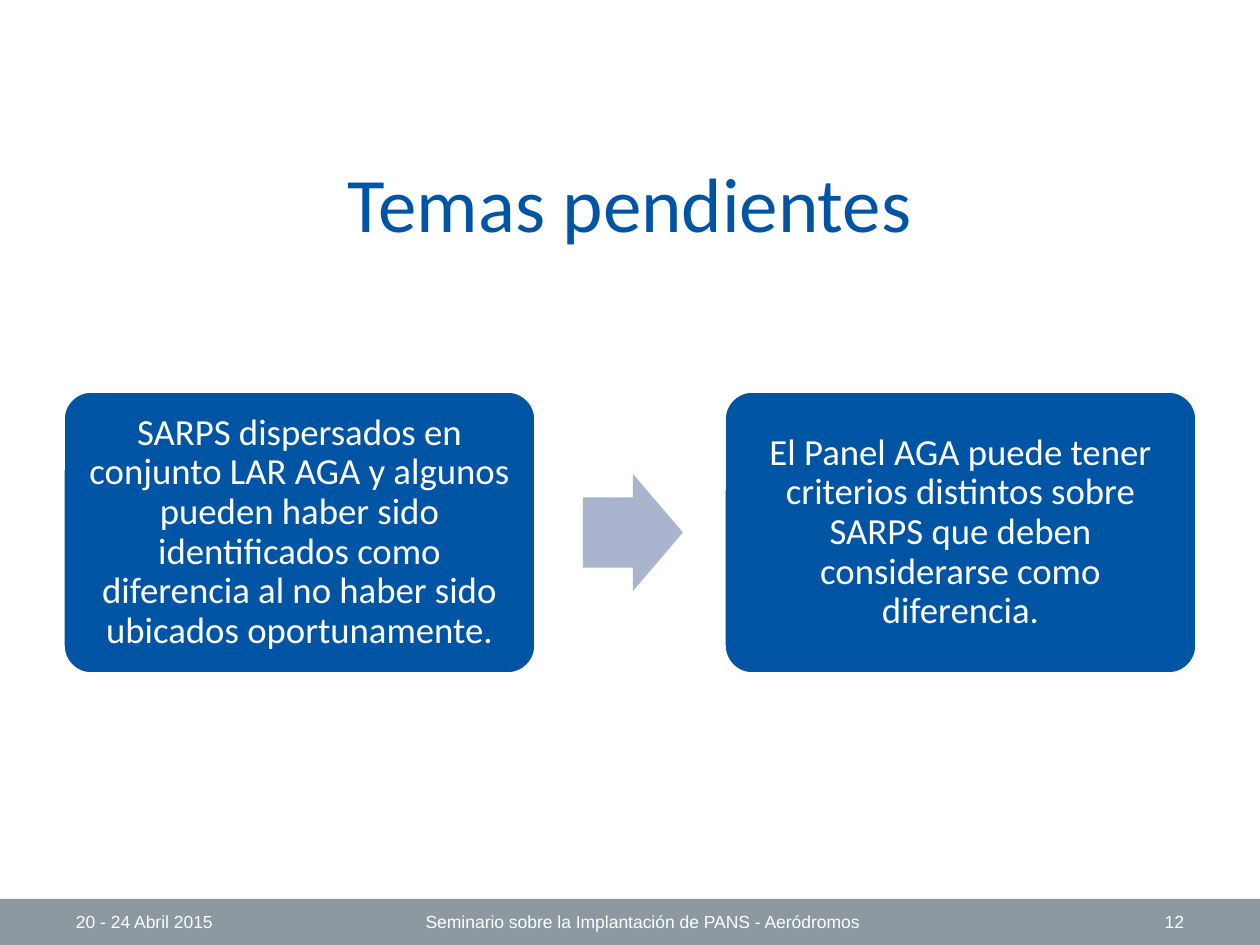
from dataclasses import dataclass

from pptx import Presentation
from pptx.dml.color import RGBColor
from pptx.enum.shapes import MSO_SHAPE
from pptx.enum.text import MSO_ANCHOR, PP_ALIGN
from pptx.shapes.autoshape import Shape
from pptx.slide import Slide
from pptx.util import Emu, Pt

PX = 914400 // 126
COLORS = {"blue": "0054A4", "arrow": "ABB4CF", "bar": "8C99A1", "white": "FFFFFF"}


@dataclass
class Area:
    left: int
    top: int
    width: int
    height: int

    def emu(self) -> list[Emu]:
        return [Emu(n * PX) for n in (self.left, self.top, self.width, self.height)]


@dataclass
class Style:
    font: str
    size: int
    color: str
    align: PP_ALIGN = PP_ALIGN.CENTER
    anchor: MSO_ANCHOR = MSO_ANCHOR.MIDDLE
    pad_x: int = 13
    pad_y: int = 6
    spacing: float = 1.0


@dataclass
class Label:
    text: str
    left: int
    width: int
    align: PP_ALIGN


def rgb(name: str) -> RGBColor:
    return RGBColor.from_string(COLORS[name])


def write(shape: Shape, text: str, style: Style) -> None:
    frame = shape.text_frame
    frame.word_wrap = True
    frame.vertical_anchor = style.anchor
    frame.margin_left = frame.margin_right = Emu(style.pad_x * PX)
    frame.margin_top = frame.margin_bottom = Emu(style.pad_y * PX)
    para = frame.paragraphs[0]
    para.text = text
    para.alignment = style.align
    para.line_spacing = style.spacing
    para.font.name = style.font
    para.font.size = Pt(style.size)
    para.font.color.rgb = rgb(style.color)


def add_text(slide: Slide, area: Area, text: str, style: Style) -> None:
    write(slide.shapes.add_textbox(*area.emu()), text, style)


def add_block(slide: Slide, kind: MSO_SHAPE, area: Area, fill: str,
              adjust: tuple[float, ...] = (), line: str = "") -> Shape:
    shape = slide.shapes.add_shape(kind, *area.emu())
    shape.shadow.inherit = False
    for index, value in enumerate(adjust):
        shape.adjustments[index] = value
    shape.fill.solid()
    shape.fill.fore_color.rgb = rgb(fill)
    if line:
        shape.line.color.rgb = rgb(line)
        shape.line.width = Pt(2)
    else:
        shape.line.fill.background()
    return shape


TITLE = Style("Calibri", 44, "blue", anchor=MSO_ANCHOR.TOP, pad_y=10)
BODY = Style("Calibri", 21, "white", pad_x=11, pad_y=11, spacing=0.9)
STEPS = [
    "SARPS dispersados en conjunto LAR AGA y algunos pueden haber sido "
    "identificados como diferencia al no haber sido ubicados oportunamente.",
    "El Panel AGA puede tener criterios distintos sobre SARPS que deben "
    "considerarse como diferencia.",
]
FOOTER = [
    Label("20 - 24 Abril 2015", 63, 294, PP_ALIGN.LEFT),
    Label("Seminario sobre la Implantación de PANS - Aeródromos", 409, 467, PP_ALIGN.CENTER),
    Label("12", 903, 294, PP_ALIGN.RIGHT),
]
BAR_TOP, BAR_HIGH = 899, 46
STEP_LEFT, STEP_PITCH = 63, 661


def main() -> None:
    deck = Presentation()
    deck.slide_width, deck.slide_height = Emu(1260 * PX), Emu(945 * PX)
    slide = deck.slides.add_slide(deck.slide_layouts[6])

    add_block(slide, MSO_SHAPE.RECTANGLE, Area(0, BAR_TOP, 1260, BAR_HIGH), "bar")
    add_text(slide, Area(63, 145, 1134, 158), "Temas pendientes", TITLE)

    for index, text in enumerate(STEPS):
        area = Area(STEP_LEFT + index * STEP_PITCH, 391, 473, 283)
        step = add_block(slide, MSO_SHAPE.ROUNDED_RECTANGLE, area, "blue", (0.1,), "white")
        write(step, text, BODY)
    add_block(slide, MSO_SHAPE.RIGHT_ARROW, Area(583, 474, 100, 117), "arrow", (0.6, 0.5))

    for label in FOOTER:
        area = Area(label.left, BAR_TOP, label.width, BAR_HIGH)
        add_text(slide, area, label.text, Style("Arial", 10, "white", label.align))

    deck.save("out.pptx")


if __name__ == "__main__":
    main()
